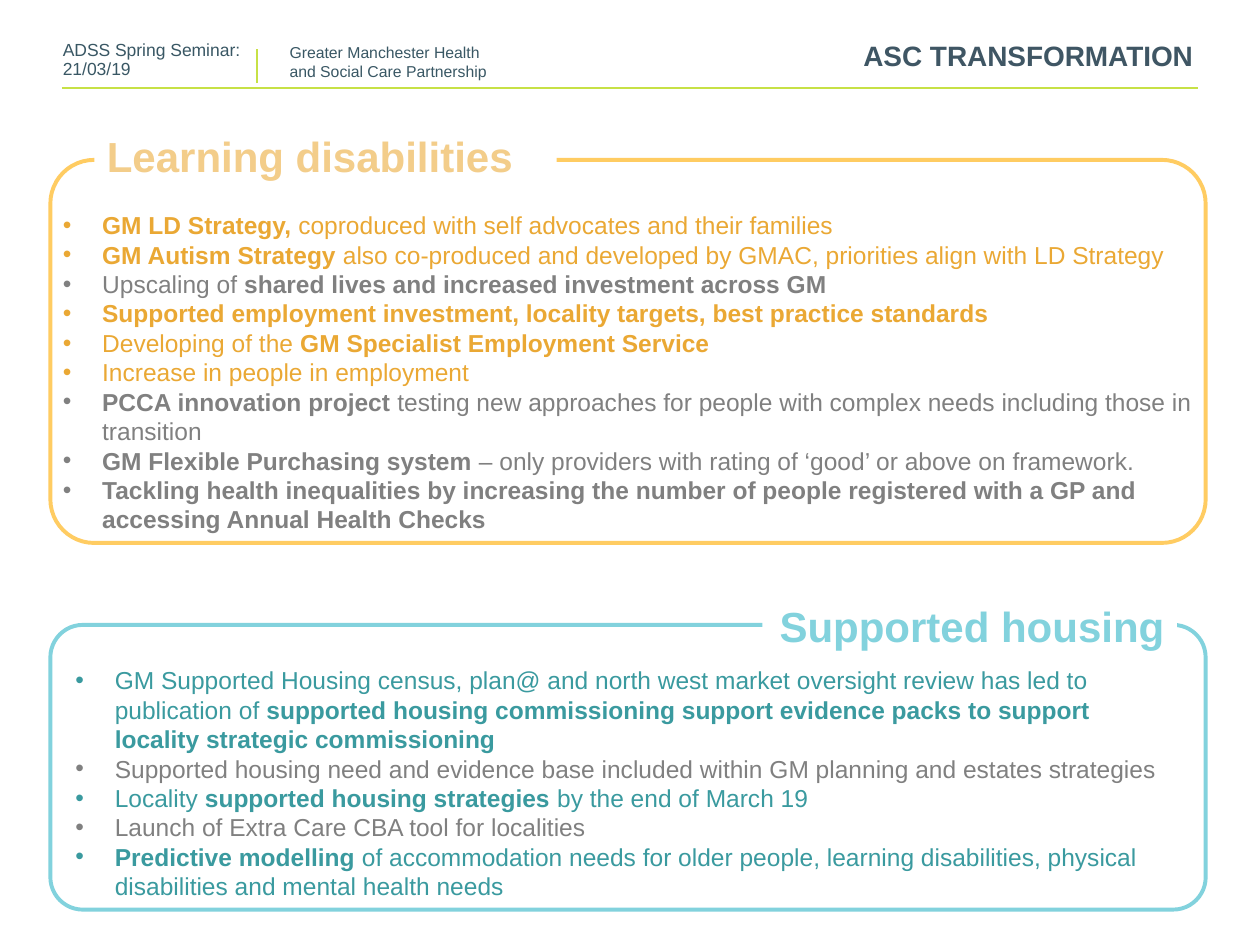
from lxml import etree
from pptx import Presentation
from pptx.dml.color import RGBColor
from pptx.enum.shapes import MSO_CONNECTOR, MSO_SHAPE
from pptx.enum.text import MSO_ANCHOR, MSO_AUTO_SIZE, PP_ALIGN
from pptx.oxml.ns import qn
from pptx.util import Pt

STRAIGHT = MSO_CONNECTOR.STRAIGHT
RECTANGLE = MSO_SHAPE.RECTANGLE
ROUNDED = MSO_SHAPE.ROUNDED_RECTANGLE
LEFT, RIGHT = PP_ALIGN.LEFT, PP_ALIGN.RIGHT
TOP, MIDDLE = MSO_ANCHOR.TOP, MSO_ANCHOR.MIDDLE
FIXED, GROW = MSO_AUTO_SIZE.NONE, MSO_AUTO_SIZE.SHAPE_TO_FIT_TEXT

FONT = "Arial"
WHITE = RGBColor(0xFF, 0xFF, 0xFF)
LIME = RGBColor(0xC7, 0xE1, 0x46)
SLATE = RGBColor(0x39, 0x57, 0x64)
TITLE_SLATE = RGBColor(0x3F, 0x56, 0x64)
GREY = RGBColor(0x80, 0x80, 0x80)
YELLOW = RGBColor(0xFF, 0xCC, 0x62)
SAND = RGBColor(0xF3, 0xCD, 0x8A)
AMBER = RGBColor(0xEA, 0xA8, 0x34)
AQUA = RGBColor(0x82, 0xD2, 0xDD)
TEAL = RGBColor(0x3A, 0x9A, 0x9F)

PANEL_LEFT, PANEL_WIDTH = 28.8, 660.2
BULLET_INDENT = 22.5

# Text between ** marks is bold.
DISABILITY_POINTS = [
    (AMBER, "**GM LD Strategy, **coproduced with self advocates and their families"),
    (AMBER, "**GM Autism Strategy **also co-produced and developed by GMAC, "
            "priorities align with LD Strategy"),
    (GREY, "Upscaling of **shared lives and increased investment across GM**"),
    (AMBER, "**Supported employment investment, locality targets, "
            "best practice standards**"),
    (AMBER, "Developing of the **GM Specialist Employment Service**"),
    (AMBER, "Increase in people in employment"),
    (GREY, "**PCCA innovation project **testing new approaches for people "
           "with complex needs including those in transition"),
    (GREY, "**GM Flexible Purchasing system **– only providers with rating "
           "of ‘good’ or above on framework."),
    (GREY, "**Tackling health inequalities by increasing the number of people "
           "registered with a GP and accessing Annual Health Checks**"),
]
HOUSING_POINTS = [
    (TEAL, "GM Supported Housing census, plan@ and north west market oversight "
           "review has led to publication of **supported housing commissioning "
           "support evidence packs to support locality strategic commissioning**"),
    (GREY, "Supported housing need and evidence base included within "
           "GM planning and estates strategies"),
    (TEAL, "Locality **supported housing strategies **by the end of March 19"),
    (GREY, "Launch of Extra Care CBA tool for localities"),
    (TEAL, "**Predictive modelling** of accommodation needs for older people, "
           "learning disabilities, physical disabilities and mental health needs"),
]


def write_text(para, text, *, size, color, align=LEFT, spacing=None):
    """Fill a paragraph; text between ** marks becomes bold."""
    para.alignment = align
    if spacing is not None:
        para.line_spacing = spacing
    for index, part in enumerate(text.split("**")):
        if part:
            span = para.add_run()
            span.text = part
            span.font.name = FONT
            span.font.size = Pt(size)
            span.font.bold = index % 2 == 1
            span.font.color.rgb = color


def set_frame(frame, anchor=TOP, auto_size=FIXED):
    frame.word_wrap = True
    frame.vertical_anchor = anchor
    frame.auto_size = auto_size


def add_text_box(page, left, top, width, height, anchor=TOP, auto_size=FIXED):
    box = page.shapes.add_textbox(Pt(left), Pt(top), Pt(width), Pt(height))
    set_frame(box.text_frame, anchor, auto_size)
    return box.text_frame


def add_rule(page, x1, y1, x2, y2):
    rule = page.shapes.add_connector(STRAIGHT, Pt(x1), Pt(y1), Pt(x2), Pt(y2))
    rule.line.color.rgb = LIME
    rule.line.width = Pt(1)
    etree.SubElement(rule._element.spPr, qn("a:effectLst"))


def add_panel(page, top, height, color):
    panel = page.shapes.add_shape(
        ROUNDED, Pt(PANEL_LEFT), Pt(top), Pt(PANEL_WIDTH), Pt(height))
    panel.adjustments[0] = 0.114
    panel.shadow.inherit = False
    panel.fill.background()
    panel.line.color.rgb = color
    panel.line.width = Pt(2.25)


def add_heading(page, text, left, top, width, color, align):
    """Place a heading on white so that it interrupts the panel border."""
    heading = page.shapes.add_shape(
        RECTANGLE, Pt(left), Pt(top), Pt(width), Pt(36))
    heading.shadow.inherit = False
    heading.fill.solid()
    heading.fill.fore_color.rgb = WHITE
    heading.line.fill.background()
    set_frame(heading.text_frame, auto_size=GROW)
    write_text(heading.text_frame.paragraphs[0], f"**{text}**",
               size=24, color=color, align=align)


def add_bullets(page, points, left, top, width, height):
    frame = add_text_box(page, left, top, width, height, auto_size=GROW)
    for index, (color, text) in enumerate(points):
        para = frame.add_paragraph() if index else frame.paragraphs[0]
        write_text(para, text, size=14, color=color)
        properties = para._p.get_or_add_pPr()
        properties.set("marL", str(Pt(BULLET_INDENT)))
        properties.set("indent", str(-Pt(BULLET_INDENT)))
        etree.SubElement(properties, qn("a:buFont"), typeface=FONT)
        etree.SubElement(properties, qn("a:buChar"), char="•")


def add_header(page):
    add_rule(page, 35.3, 50.4, 684.7, 50.4)
    add_rule(page, 146.9, 47.5, 146.9, 28.1)

    partnership = add_text_box(page, 158.4, 20.9, 187.9, 28.8, anchor=MIDDLE)
    write_text(partnership.paragraphs[0], "Greater Manchester Health",
               size=9, color=SLATE)
    write_text(partnership.add_paragraph(), "and Social Care Partnership",
               size=9, color=SLATE)

    event = add_text_box(page, 28.8, 20.2, 121, 27.4)
    write_text(event.paragraphs[0], "ADSS Spring Seminar: 21/03/19",
               size=10, color=SLATE, spacing=0.9)

    title = page.shapes.title
    title.left, title.top = Pt(463.7), Pt(29.5)
    title.width, title.height = Pt(225.4), Pt(13)
    set_frame(title.text_frame)
    write_text(title.text_frame.paragraphs[0], "**ASC TRANSFORMATION**",
               size=16, color=TITLE_SLATE, align=RIGHT, spacing=Pt(8))


def main():
    deck = Presentation()
    deck.slide_width, deck.slide_height = Pt(720), Pt(540)
    page = deck.slides.add_slide(deck.slide_layouts[5])

    add_header(page)

    add_panel(page, 91.4, 218.9, YELLOW)
    add_heading(page, "Learning disabilities", 54, 71.3, 264.2, SAND, LEFT)
    add_bullets(page, DISABILITY_POINTS, PANEL_LEFT, 116.6, PANEL_WIDTH, 193.7)

    add_panel(page, 357.1, 162.7, AQUA)
    add_heading(page, "Supported housing", 435.6, 339.8, 236.9, AQUA, RIGHT)
    add_bullets(page, HOUSING_POINTS, 36, 376.6, 646.6, 143.3)

    deck.save("out.pptx")


if __name__ == "__main__":
    main()
